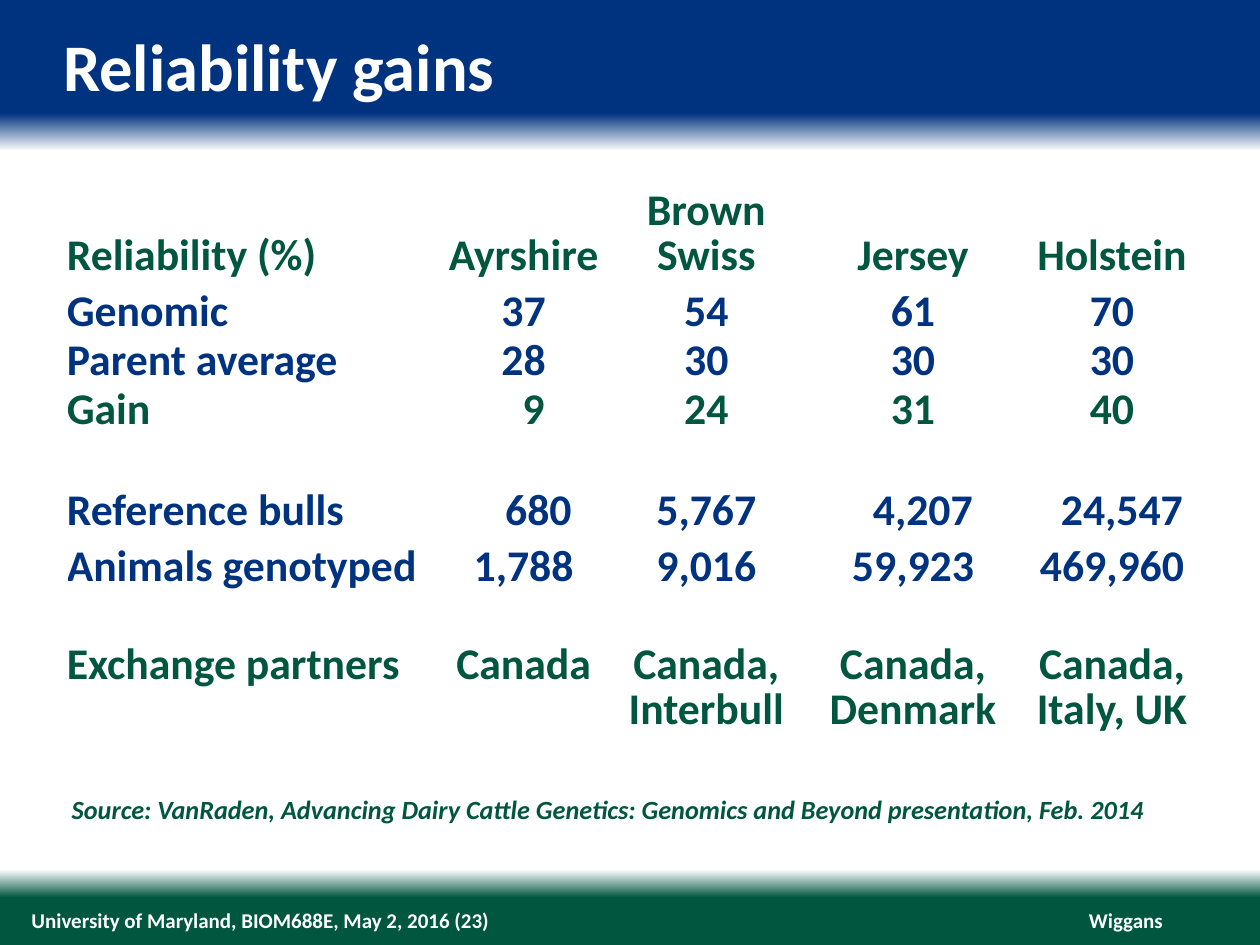
import pptx
import pptx.dml.color
import pptx.enum.text
import pptx.oxml.ns
import pptx.util
from lxml import etree

Pt = pptx.util.Pt
ALIGN = pptx.enum.text.PP_ALIGN
ANCHOR = pptx.enum.text.MSO_ANCHOR
qn = pptx.oxml.ns.qn

COLORS = {"blue": "00337F", "green": "00563F", "white": "FFFFFF"}
FONT = "Calibri"


def write_text(frame, text, size=25, color="green", italic=False,
               align=ALIGN.LEFT, spacing=None):
    para = frame.paragraphs[0]
    para.alignment = align
    if spacing:
        para.line_spacing = Pt(spacing)
    span = para.add_run()
    span.text = text
    span.font.name = FONT
    span.font.size = Pt(size)
    span.font.bold = True
    span.font.italic = italic
    span.font.color.rgb = pptx.dml.color.RGBColor.from_string(COLORS[color])


def clear_margins(holder):
    holder.margin_left = holder.margin_right = 0
    holder.margin_top = holder.margin_bottom = 0


class SlideBuilder:
    def __init__(self, deck):
        self.page = deck.slides.add_slide(deck.slide_layouts[5])

    def background(self, stops):
        fill = self.page.background.fill
        fill.gradient()
        fill.gradient_angle = 270
        stop_list = self.page.element.find(".//" + qn("a:gsLst"))
        for old in list(stop_list):
            stop_list.remove(old)
        for percent, color in stops:
            stop = etree.SubElement(stop_list, qn("a:gs"), pos=str(percent * 1000))
            etree.SubElement(stop, qn("a:srgbClr"), val=COLORS[color])

    def place(self, box, left, top, width, height):
        box.left, box.top = Pt(left), Pt(top)
        box.width, box.height = Pt(width), Pt(height)

    def title(self, text, *bounds):
        box = self.page.shapes.title
        self.place(box, *bounds)
        frame = box.text_frame
        clear_margins(frame)
        frame.vertical_anchor = ANCHOR.TOP
        frame.auto_size = pptx.enum.text.MSO_AUTO_SIZE.NONE
        write_text(frame, text, size=38, color="white")

    def text(self, text, *bounds, anchor=ANCHOR.TOP, wrap=True, **style):
        box = self.page.shapes.add_textbox(*map(Pt, bounds))
        frame = box.text_frame
        clear_margins(frame)
        frame.word_wrap = wrap
        frame.vertical_anchor = anchor
        write_text(frame, text, **style)

    def table(self, left, top, widths, rows):
        heights = [row["height"] for row in rows]
        table = self.page.shapes.add_table(
            len(rows), len(widths), Pt(left), Pt(top),
            Pt(sum(widths)), Pt(sum(heights))).table
        table.first_row = table.horz_banding = False
        for column, width in zip(table.columns, widths):
            column.width = Pt(width)
        for index, row in enumerate(rows):
            table.rows[index].height = Pt(row["height"])
            for number, cell in enumerate(table.rows[index].cells):
                self.cell(cell, number, row)

    def cell(self, cell, number, row):
        cell.fill.background()
        clear_margins(cell)
        if "texts" not in row:
            return
        cell.margin_left = Pt(row.get("indents", {}).get(number, 0))
        cell.margin_top = Pt(row.get("above", 0))
        cell.margin_bottom = Pt(row.get("below", 0))
        cell.vertical_anchor = row.get("anchor", ANCHOR.TOP)
        write_text(cell.text_frame, row["texts"][number], color=row["color"],
                   spacing=row.get("spacing", 28),
                   align=ALIGN.CENTER if number else ALIGN.LEFT)


# Indents, by column, line the digits of shorter numbers up with longer ones
SPACE = 5.65
GAP = {"height": 30}
ROWS = [
    {"texts": ["Reliability (%)", "Ayrshire", "Brown Swiss", "Jersey", "Holstein"],
     "color": "green", "height": 55.6, "spacing": 26, "below": 3.6,
     "anchor": ANCHOR.BOTTOM},
    {"texts": ["Genomic", "37", "54", "61", "70"], "color": "blue", "height": 28},
    {"texts": ["Parent average", "28", "30", "30", "30"], "color": "blue",
     "height": 28},
    {"texts": ["Gain", "9", "24", "31", "40"], "color": "green", "height": 28,
     "indents": {1: 2 * SPACE}},
    GAP,
    {"texts": ["Reference bulls", "680", "5,767", "4,207", "24,547"],
     "color": "blue", "height": 28,
     "indents": {1: 3 * SPACE, 3: 2 * SPACE, 4: 2 * SPACE}},
    {"texts": ["Animals genotyped", "1,788", "9,016", "59,923", "469,960"],
     "color": "blue", "height": 31.6, "above": 3.6},
    GAP,
    {"texts": ["Exchange partners", "Canada", "Canada, Interbull",
               "Canada, Denmark", "Canada, Italy, UK"],
     "color": "green", "height": 52, "spacing": 26},
]


def main():
    deck = pptx.Presentation()
    deck.slide_width, deck.slide_height = Pt(720), Pt(540)
    slide = SlideBuilder(deck)

    # Blue header and green footer bands
    slide.background([(0, "blue"), (12, "blue"), (16, "white"),
                      (92, "white"), (95, "green"), (100, "green")])

    # Footer
    footer = {"size": 12, "color": "white", "anchor": ANCHOR.MIDDLE}
    slide.text("Wiggans", 622, 518.4, 42.5, 14.4, wrap=False,
               align=ALIGN.RIGHT, **footer)
    slide.text("University of Maryland, BIOM688E, May 2, 2016 (23)",
               18, 518.4, 534, 14.4, **footer)

    # Title, table and source
    slide.title("Reliability gains", 36, 14.4, 648, 46)
    slide.table(38.2, 109.4, [211.7, 98.6, 110.2, 126, 101.5], ROWS)
    slide.text("Source: VanRaden, Advancing Dairy Cattle Genetics: "
               "Genomics and Beyond presentation, Feb. 2014",
               41, 453, 648, 18, size=15, italic=True)

    deck.save("out.pptx")


if __name__ == "__main__":
    main()
